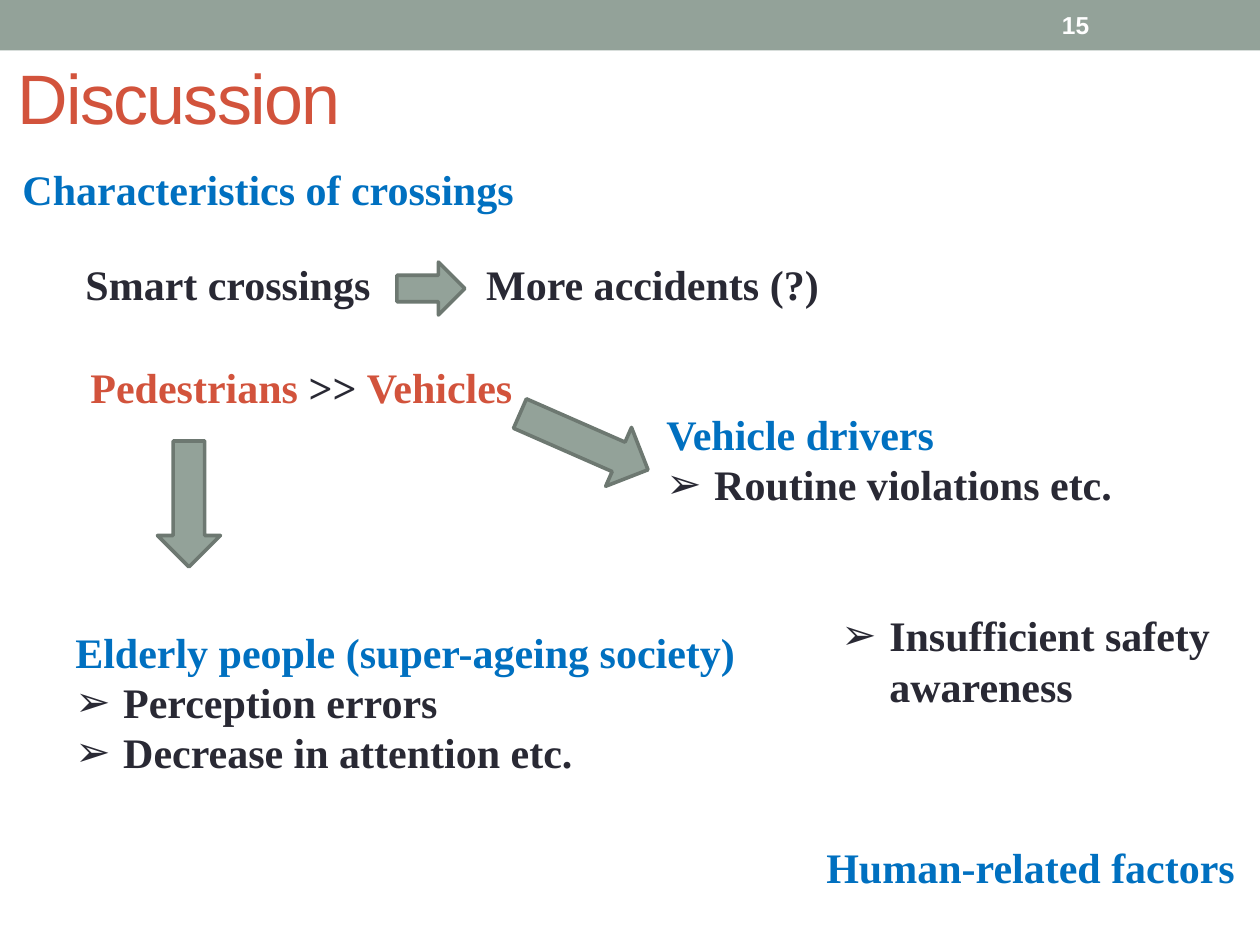
from dataclasses import dataclass

from lxml.etree import SubElement
from pptx import Presentation
from pptx.dml.color import RGBColor
from pptx.enum.shapes import MSO_SHAPE as Preset
from pptx.enum.text import MSO_ANCHOR as Anchor, MSO_AUTO_SIZE as AutoSize, PP_ALIGN as Align
from pptx.oxml.ns import qn
from pptx.util import Inches, Pt


@dataclass(frozen=True)
class Theme:
    """Colours, fonts and type sizes of the slide."""
    sage: RGBColor = RGBColor.from_string("93A299")
    outline: RGBColor = RGBColor.from_string("6D7871")
    accent: RGBColor = RGBColor.from_string("D2533C")
    heading: RGBColor = RGBColor.from_string("0070C0")
    ink: RGBColor = RGBColor.from_string("292934")
    white: RGBColor = RGBColor.from_string("FFFFFF")
    sans: str = "Arial"
    serif: str = "Times New Roman"
    title_size: Pt = Pt(40)
    body_size: Pt = Pt(24)
    number_size: Pt = Pt(14)


THEME = Theme()


def style(font, name, size, color, bold):
    """Set the face, size, colour and weight of a font."""
    font.name, font.size, font.bold = name, size, bold
    font.color.rgb = color


def place(shape, box):
    """Move and size a shape to left, top, width, height in inches."""
    shape.left, shape.top, shape.width, shape.height = map(Inches, box)


def add_preset(slide, preset, box, line=None, rotation=0):
    """Add a sage preset shape, outlined when a line colour is given."""
    shape = slide.shapes.add_shape(preset, *map(Inches, box))
    shape.shadow.inherit = False
    shape.fill.solid()
    shape.fill.fore_color.rgb = THEME.sage
    shape.rotation = rotation
    if line is None:
        shape.line.fill.background()
    else:
        shape.line.color.rgb = line
        shape.line.width = Pt(2.08)


def add_title(slide, text, box):
    """Fill the title placeholder with tightly spaced left-aligned text."""
    title = slide.shapes.title
    place(title, box)
    title.text_frame.vertical_anchor = Anchor.MIDDLE
    paragraph = title.text_frame.paragraphs[0]
    paragraph.alignment = Align.LEFT
    run = paragraph.add_run()
    run.text = text
    style(run.font, THEME.sans, THEME.title_size, THEME.accent, False)
    run.font._element.set("spc", "-100")


def add_page_number(slide, text, box):
    """Add the page number on the top band."""
    frame = slide.shapes.add_textbox(*map(Inches, box)).text_frame
    frame.word_wrap = True
    frame.vertical_anchor = Anchor.MIDDLE
    paragraph = frame.paragraphs[0]
    paragraph.text = text
    style(paragraph.font, THEME.sans, THEME.number_size, THEME.white, True)


def add_body_box(slide, box):
    """Add a wrapping text box that grows with its text and return its frame."""
    frame = slide.shapes.add_textbox(*map(Inches, box)).text_frame
    frame.word_wrap = True
    frame.auto_size = AutoSize.SHAPE_TO_FIT_TEXT
    return frame


def write_line(paragraph, text, color):
    """Write one bold body line in a single colour."""
    paragraph.text = text
    style(paragraph.font, THEME.serif, THEME.body_size, color, True)


def set_bullet(paragraph):
    """Give a paragraph an arrowhead bullet with a hanging indent."""
    properties = paragraph._p.get_or_add_pPr()
    properties.set("marL", str(Inches(0.38)))
    properties.set("indent", str(-Inches(0.38)))
    SubElement(properties, qn("a:buFont")).set("typeface", THEME.sans)
    SubElement(properties, qn("a:buChar")).set("char", "➢")
    defaults = properties.find(qn("a:defRPr"))
    properties.append(defaults)


def set_tab(paragraph, position):
    """Set one left tab stop at a distance in inches."""
    properties = paragraph._p.get_or_add_pPr()
    tab = SubElement(SubElement(properties, qn("a:tabLst")), qn("a:tab"))
    tab.set("pos", str(Inches(position)))
    tab.set("algn", "l")
    properties.append(properties.find(qn("a:defRPr")))


def add_topic(slide, box, heading=None, bullets=()):
    """Add an optional blue heading followed by bulleted lines."""
    frame = add_body_box(slide, box)
    lines = ([heading] if heading else []) + list(bullets)
    for index, text in enumerate(lines):
        paragraph = frame.add_paragraph() if index else frame.paragraphs[0]
        is_heading = heading is not None and index == 0
        write_line(paragraph, text, THEME.heading if is_heading else THEME.ink)
        if not is_heading:
            set_bullet(paragraph)


def add_tabbed_line(slide, box, parts, position):
    """Add one line whose two parts are separated by a tab stop."""
    paragraph = add_body_box(slide, box).paragraphs[0]
    write_line(paragraph, "\t".join(parts), THEME.ink)
    set_tab(paragraph, position)


def add_comparison(slide, box, parts):
    """Add one line of differently coloured parts."""
    paragraph = add_body_box(slide, box).paragraphs[0]
    for text, color in parts:
        run = paragraph.add_run()
        run.text = text
        style(run.font, THEME.serif, THEME.body_size, color, True)


def main():
    """Build the discussion slide and save it."""
    presentation = Presentation()
    presentation.slide_width, presentation.slide_height = Inches(10), Inches(7.5)
    slide = presentation.slides.add_slide(presentation.slide_layouts[5])

    add_preset(slide, Preset.RECTANGLE, (0, 0, 10, 0.4))
    add_title(slide, "Discussion", (0.04, 0.35, 3.67, 0.83))
    add_page_number(slide, "15", (8.33, 0.02, 1.17, 0.36))

    add_topic(slide, (0.08, 1.25, 6.92, 0.5), "Characteristics of crossings")
    add_topic(slide, (6.46, 6.63, 3.75, 0.5), "Human-related factors")
    add_tabbed_line(slide, (0.58, 2, 6.92, 0.5),
                    ("Smart crossings", "More accidents (?)"), 3.18)
    add_comparison(slide, (0.62, 2.82, 5.1, 0.5),
                   (("Pedestrians", THEME.accent), (" >> ", THEME.ink),
                    ("Vehicles", THEME.accent)))
    add_topic(slide, (0.5, 4.92, 5.96, 1.31), "Elderly people (super-ageing society)",
              ("Perception errors", "Decrease in attention etc."))
    add_topic(slide, (5.19, 3.19, 3.93, 0.91), "Vehicle drivers",
              ("Routine violations etc.",))
    add_topic(slide, (6.58, 4.79, 3.33, 0.91), bullets=("Insufficient safety awareness",))

    for preset, box, rotation in (
        (Preset.RIGHT_ARROW, (3.15, 2.08, 0.54, 0.42), 0),
        (Preset.DOWN_ARROW, (1.25, 3.5, 0.5, 1), 0),
        (Preset.DOWN_ARROW, (4.38, 2.95, 0.51, 1.11), 293.7),
    ):
        add_preset(slide, preset, box, THEME.outline, rotation)

    presentation.save("out.pptx")


if __name__ == "__main__":
    main()
